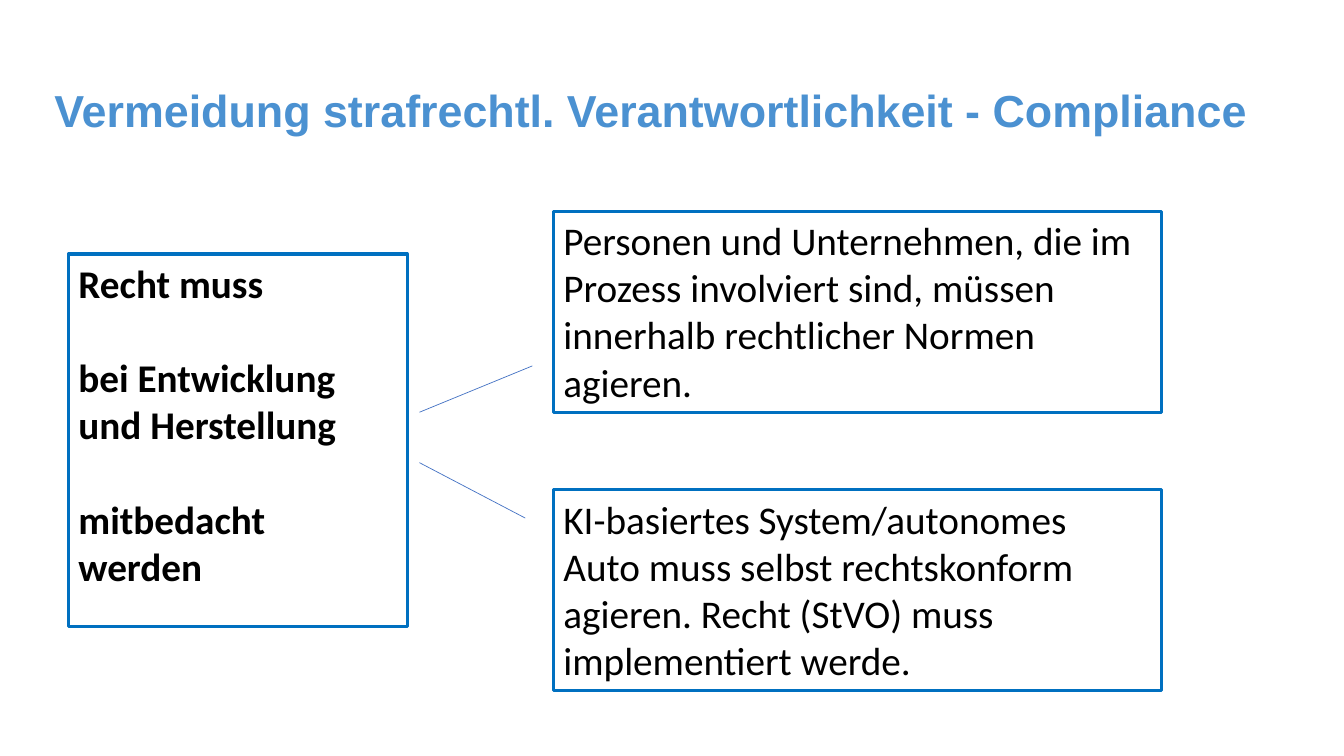
from dataclasses import dataclass

from lxml import etree
from pptx import Presentation
from pptx.dml.color import RGBColor
from pptx.enum import shapes, text
from pptx.oxml import ns
from pptx.util import Pt

PX = 9144


@dataclass(frozen=True)
class Theme:
    """Colours, fonts and type sizes of the slide."""
    title: RGBColor = RGBColor(0x4B, 0x91, 0xD1)
    border: RGBColor = RGBColor(0x00, 0x70, 0xC0)
    link: RGBColor = RGBColor(0x44, 0x72, 0xC4)
    ink: RGBColor = RGBColor(0, 0, 0)
    title_font: str = "Arial"
    body_font: str = "Calibri"
    title_size: int = 32
    body_size: int = 28
    group_gap: int = 34
    border_width: float = 2.25
    link_width: float = 0.5


THEME = Theme()


def px(*lengths):
    """Turn pixel lengths into EMU."""
    return [n * PX for n in lengths]


def style(p, name, size, color, bold):
    """Set the font of a whole paragraph."""
    p.font.name, p.font.size, p.font.bold = name, Pt(size), bold
    p.font.color.rgb = color


def add_title(slide, box, wording):
    """Place the slide title, centred vertically in its box."""
    tf = slide.shapes.add_textbox(*px(*box)).text_frame
    tf.word_wrap = True
    tf.vertical_anchor = text.MSO_ANCHOR.MIDDLE
    p = tf.paragraphs[0]
    p.text = wording
    p.line_spacing = 0.9
    style(p, THEME.title_font, THEME.title_size, THEME.title, True)


def add_statement(slide, box, groups, bold=False):
    """Place an outlined box whose groups of lines are set apart."""
    sp = slide.shapes.add_shape(shapes.MSO_SHAPE.RECTANGLE, *px(*box))
    sp.shadow.inherit = False
    sp.fill.background()
    sp.line.color.rgb = THEME.border
    sp.line.width = Pt(THEME.border_width)
    tf = sp.text_frame
    tf.word_wrap = True
    tf.vertical_anchor = text.MSO_ANCHOR.TOP
    for g, lines in enumerate(groups):
        for i, line in enumerate(lines):
            p = tf.add_paragraph() if g or i else tf.paragraphs[0]
            p.text = line
            p.alignment = text.PP_ALIGN.LEFT
            p.space_before = Pt(THEME.group_gap if g and not i else 0)
            style(p, THEME.body_font, THEME.body_size, THEME.ink, bold)


def add_link(slide, start, end):
    """Draw a thin line between two points."""
    line = slide.shapes.add_connector(
        shapes.MSO_CONNECTOR.STRAIGHT, *px(*start, *end))
    line.line.color.rgb = THEME.link
    line.line.width = Pt(THEME.link_width)
    etree.SubElement(line._element.spPr, ns.qn("a:effectLst"))


def add_compliance(slide, box):
    """Place the requirement, its two consequences and their links."""
    x, y, w, h = box
    add_statement(slide, (x, y + 42, 336, 370), [
        ["Recht muss"],
        ["bei Entwicklung", "und Herstellung"],
        ["mitbedacht werden"],
    ], bold=True)
    consequences = [
        "Personen und Unternehmen, die im Prozess involviert sind, müssen "
        "innerhalb rechtlicher Normen agieren.",
        "KI-basiertes System/autonomes Auto muss selbst rechtskonform "
        "agieren. Recht (StVO) muss implementiert werde.",
    ]
    width, height = 603, 199
    for i, wording in enumerate(consequences):
        top = y + i * (h - height)
        add_statement(slide, (x + w - width, top, width, height), [[wording]])
    for start_y, end_x, end_y in [(199, 460, 153), (249, 453, 304)]:
        add_link(slide, (x + 348, y + start_y), (x + end_x, y + end_y))


def main():
    """Build and save the slide."""
    prs = Presentation()
    prs.slide_width, prs.slide_height = px(1333, 750)
    slide = prs.slides.add_slide(prs.slide_layouts[6])
    add_title(slide, (44, 40, 1223, 145),
              "Vermeidung strafrechtl. Verantwortlichkeit - Compliance")
    add_compliance(slide, (68, 210, 1084, 475))
    prs.save("out.pptx")


if __name__ == "__main__":
    main()
